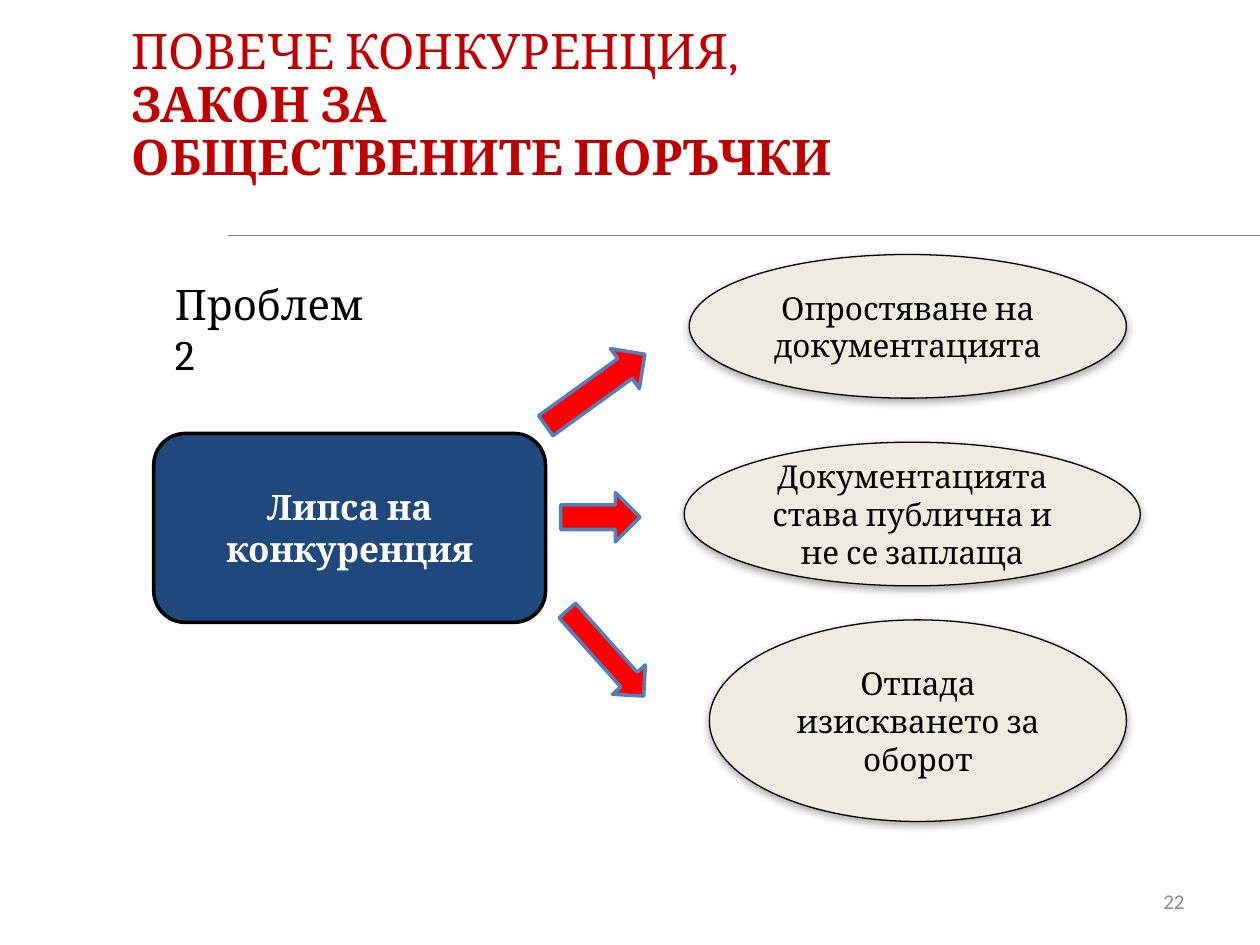
from dataclasses import dataclass

from lxml import etree
from pptx import Presentation
from pptx import util as u
from pptx.dml.color import RGBColor
from pptx.enum import shapes, text
from pptx.oxml.ns import qn


@dataclass(frozen=True)
class Theme:
    font: str = "Cambria"
    number_font: str = "Calibri"
    red: str = "C00000"
    arrow: str = "FF0000"
    blue: str = "4F81BD"
    navy: str = "1F497D"
    cream: str = "EEECE1"
    black: str = "000000"
    white: str = "FFFFFF"
    rule: str = "7F7F7F"
    grey: str = "898989"
    title_pt: int = 28
    label_pt: int = 24
    problem_pt: int = 20
    measure_pt: int = 18
    number_pt: int = 12


@dataclass(frozen=True)
class Box:
    left: float
    top: float
    width: float
    height: float

    def emu(self) -> list[int]:
        return [u.Inches(v) for v in (self.left, self.top, self.width, self.height)]


@dataclass(frozen=True)
class Measure:
    box: Box
    words: str


@dataclass(frozen=True)
class Arrow:
    box: Box
    rotation: float


T = Theme()
MEASURES = [
    Measure(Box(5.47, 2.02, 3.47, 1.14), "Опростяване на документацията"),
    Measure(Box(5.43, 3.51, 3.62, 1.14), "Документацията става публична и не се заплаща"),
    Measure(Box(5.63, 4.92, 3.31, 1.6), "Отпада изискването за оборот"),
]
ARROWS = [
    Arrow(Box(4.24, 2.9, 0.97, 0.39), 324.2),
    Arrow(Box(4.45, 3.91, 0.63, 0.39), 0),
    Arrow(Box(4.35, 5.01, 0.91, 0.35), 48.2),
]


def rgb(value: str) -> RGBColor:
    return RGBColor.from_string(value)


def write(tf, lines: list[str], size: int, color: str, align, bold=False,
          font: str = T.font, anchor=text.MSO_ANCHOR.MIDDLE) -> None:
    """Fill a text frame with one paragraph per line."""
    tf.word_wrap = True
    tf.vertical_anchor = anchor
    tf.text = "\n".join(lines)
    for p in tf.paragraphs:
        p.alignment = align
        p.font.name, p.font.size, p.font.bold = font, u.Pt(size), bold
        p.font.color.rgb = rgb(color)


def add_block(s, kind, box: Box, fill: str, line: str, width: float):
    sp = s.shapes.add_shape(kind, *box.emu())
    sp.shadow.inherit = False
    sp.fill.solid()
    sp.fill.fore_color.rgb = rgb(fill)
    sp.line.color.rgb = rgb(line)
    sp.line.width = u.Pt(width)
    return sp


def add_soft_shadow(sp) -> None:
    effects = sp._element.spPr.find(qn("a:effectLst"))
    shadow = etree.SubElement(effects, qn("a:outerShdw"), blurRad=str(u.Pt(5)),
                              dist=str(u.Pt(1.8)), dir="5400000", rotWithShape="0")
    color = etree.SubElement(shadow, qn("a:srgbClr"), val=T.black)
    etree.SubElement(color, qn("a:alpha"), val="35000")


def add_measure(s, measure: Measure) -> None:
    sp = add_block(s, shapes.MSO_SHAPE.OVAL, measure.box, T.cream, T.black, 0.75)
    add_soft_shadow(sp)
    write(sp.text_frame, [measure.words], T.measure_pt, T.black, text.PP_ALIGN.CENTER)


def add_arrow(s, arrow: Arrow) -> None:
    sp = add_block(s, shapes.MSO_SHAPE.RIGHT_ARROW, arrow.box, T.arrow, T.blue, 2)
    sp.rotation = arrow.rotation


def add_title(s) -> None:
    title = s.shapes.title
    title.left, title.top, title.width, title.height = Box(0.94, 0.18, 8.07, 1.33).emu()
    write(title.text_frame, ["ПОВЕЧЕ КОНКУРЕНЦИЯ,", "ЗАКОН ЗА\vОБЩЕСТВЕНИТЕ ПОРЪЧКИ"],
          T.title_pt, T.red, text.PP_ALIGN.LEFT)
    title.text_frame.auto_size = text.MSO_AUTO_SIZE.NONE
    for p in title.text_frame.paragraphs:
        p.line_spacing = 0.9
        p.space_before = u.Pt(0)
    title.text_frame.paragraphs[1].font.bold = True


def add_rule(s) -> None:
    rule = s.shapes.add_connector(shapes.MSO_CONNECTOR.STRAIGHT, u.Inches(1.81),
                                  u.Inches(1.87), u.Inches(10), u.Inches(1.87))
    rule.line.color.rgb = rgb(T.rule)
    rule.line.width = u.Pt(0.75)
    etree.SubElement(rule._element.spPr, qn("a:effectLst"))


def main() -> None:
    prs = Presentation()
    prs.slide_width, prs.slide_height = u.Inches(10), u.Inches(7.5)
    s = prs.slides.add_slide(prs.slide_layouts[5])

    # Heading
    add_title(s)
    add_rule(s)

    # Problem
    label = s.shapes.add_textbox(*Box(1.29, 2.16, 1.81, 0.5).emu())
    write(label.text_frame, ["Проблем 2"], T.label_pt, T.black, text.PP_ALIGN.LEFT,
          anchor=text.MSO_ANCHOR.TOP)
    problem = add_block(s, shapes.MSO_SHAPE.ROUNDED_RECTANGLE,
                        Box(1.22, 3.44, 3.11, 1.5), T.navy, T.black, 2)
    write(problem.text_frame, ["Липса на", "конкуренция"], T.problem_pt, T.white,
          text.PP_ALIGN.CENTER, bold=True)

    # Measures and the arrows leading to them
    for arrow in ARROWS:
        add_arrow(s, arrow)
    for measure in MEASURES:
        add_measure(s, measure)

    # Slide number
    number = s.shapes.add_textbox(*Box(7.17, 6.95, 2.33, 0.4).emu())
    write(number.text_frame, ["22"], T.number_pt, T.grey, text.PP_ALIGN.RIGHT,
          font=T.number_font)

    prs.save("out.pptx")


if __name__ == "__main__":
    main()
